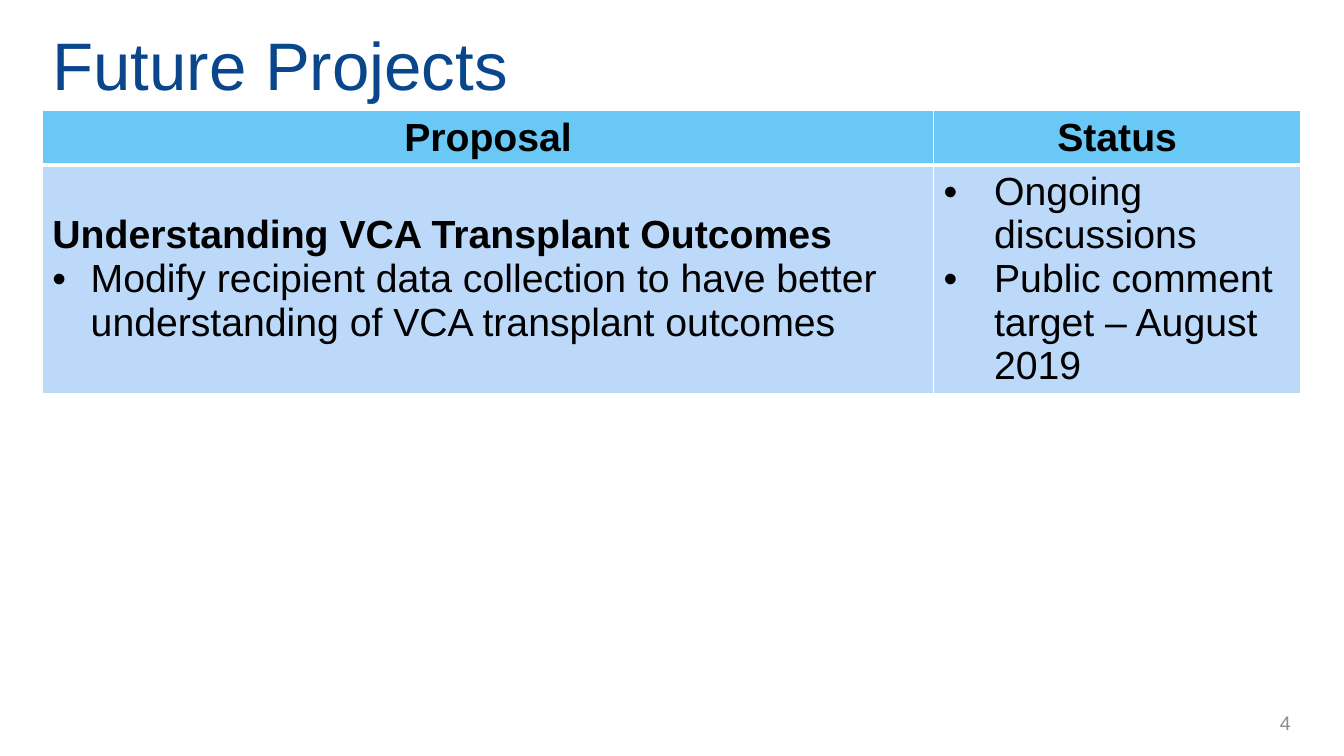
from lxml import etree
from pptx import Presentation
from pptx.dml.color import RGBColor
from pptx.enum.text import MSO_ANCHOR, PP_ALIGN
from pptx.oxml.ns import qn
from pptx.util import Inches, Pt

MIDDLE = MSO_ANCHOR.MIDDLE
LEFT, CENTER, RIGHT = PP_ALIGN.LEFT, PP_ALIGN.CENTER, PP_ALIGN.RIGHT
TITLE_ONLY = 5
FONT = "Arial"
COLORS = {
    "title": "0A468C",
    "text": "000000",
    "number": "8C8C8C",
    "header": "69C8F5",
    "body": "BCD9FA",
    "border": "FFFFFF",
}
COLUMN_WIDTHS = (8.84, 3.64)
ROW_HEIGHTS = (0.53, 2.26)

# Each paragraph: text, bold, bullet indent in inches (0 for no bullet)
ROWS = [
    [[("Proposal", True, 0)], [("Status", True, 0)]],
    [
        [
            ("Understanding VCA Transplant Outcomes", True, 0),
            ("Modify recipient data collection to have better "
             "understanding of VCA transplant outcomes", False, 0.38),
        ],
        [
            ("Ongoing discussions", False, 0.5),
            ("Public comment target – August 2019", False, 0.5),
        ],
    ],
]


def style_paragraph(para, size, color, align=LEFT, bold=False):
    para.alignment = align
    para.font.name = FONT
    para.font.size = Pt(size)
    para.font.bold = bold
    para.font.color.rgb = RGBColor.from_string(COLORS[color])


def add_bullet(para, indent):
    """Give the paragraph a bullet with a hanging indent in inches."""
    properties = para._p.get_or_add_pPr()
    properties.set("marL", str(Inches(indent)))
    properties.set("indent", str(-Inches(indent)))
    etree.SubElement(properties, qn("a:buFont"), typeface=FONT)
    etree.SubElement(properties, qn("a:buChar"), char="•")


def set_borders(cell, bottom):
    """Draw 1 pt borders, with the bottom one of its own width."""
    properties = cell._tc.get_or_add_tcPr()
    for side, width in (("L", 1), ("R", 1), ("T", 1), ("B", bottom)):
        line = etree.SubElement(properties, qn(f"a:ln{side}"), w=str(Pt(width)))
        fill = etree.SubElement(line, qn("a:solidFill"))
        etree.SubElement(fill, qn("a:srgbClr"), val=COLORS["border"])


def fill_cell(cell, paragraphs, is_header):
    set_borders(cell, 3 if is_header else 1)
    cell.fill.solid()
    fill_name = "header" if is_header else "body"
    cell.fill.fore_color.rgb = RGBColor.from_string(COLORS[fill_name])
    cell.vertical_anchor = MIDDLE
    frame = cell.text_frame
    for index, (text, bold, indent) in enumerate(paragraphs):
        para = frame.add_paragraph() if index else frame.paragraphs[0]
        para.text = text
        if indent:
            add_bullet(para, indent)
        style_paragraph(para, 28, "text", CENTER if is_header else LEFT, bold)


def add_title(page, text):
    title = page.shapes.title
    title.left, title.top = Inches(0.42), Inches(0.17)
    title.width, title.height = Inches(12.75), Inches(0.93)
    title.text_frame.text = text
    title.text_frame.vertical_anchor = MIDDLE
    style_paragraph(title.text_frame.paragraphs[0], 48, "title")


def add_project_table(page):
    table = page.shapes.add_table(
        len(ROWS), len(COLUMN_WIDTHS), Inches(0.42), Inches(1.1),
        Inches(sum(COLUMN_WIDTHS)), Inches(sum(ROW_HEIGHTS))).table
    for column, width in zip(table.columns, COLUMN_WIDTHS):
        column.width = Inches(width)
    for row_index, (row, height) in enumerate(zip(table.rows, ROW_HEIGHTS)):
        row.height = Inches(height)
        for cell, paragraphs in zip(row.cells, ROWS[row_index]):
            fill_cell(cell, paragraphs, row_index == 0)


def add_page_number(page, number):
    box = page.shapes.add_textbox(
        Inches(10.64), Inches(6.97), Inches(2.26), Inches(0.4))
    frame = box.text_frame
    frame.word_wrap = True
    frame.vertical_anchor = MIDDLE
    frame.text = number
    style_paragraph(frame.paragraphs[0], 14, "number", RIGHT)


def main():
    deck = Presentation()
    deck.slide_width, deck.slide_height = Inches(13.33), Inches(7.5)
    page = deck.slides.add_slide(deck.slide_layouts[TITLE_ONLY])
    add_title(page, "Future Projects")
    add_project_table(page)
    add_page_number(page, "4")
    deck.save("out.pptx")


if __name__ == "__main__":
    main()
